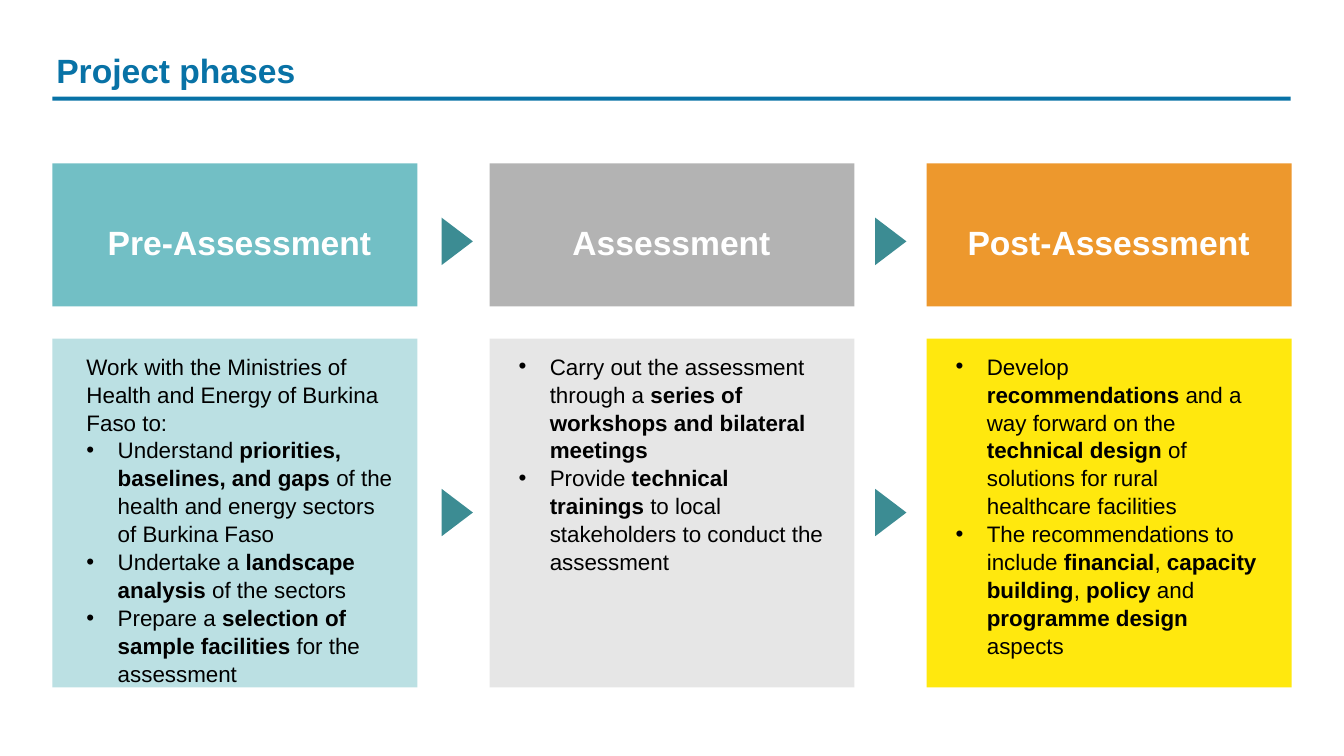
from dataclasses import dataclass
from pptx import Presentation, util as u
from pptx.dml.color import RGBColor
from pptx.enum import shapes, text
from pptx.oxml.ns import qn
from lxml import etree


@dataclass(frozen=True)
class Theme:
    font: str = "Arial"
    head: int = 24
    body: int = 16
    lead: float = 1.045
    cell: float = 0.1
    blue: str = "0872A6"
    arrow: str = "3C8C93"
    white: str = "FFFFFF"
    black: str = "000000"


class Board:
    def __init__(self, slide, theme):
        self.slide = slide
        self.theme = theme

    def span(self, *cells):
        return [u.Inches(n * self.theme.cell) for n in cells]

    def block(self, col, row, wide, high, fill, kind="RECTANGLE", turn=0):
        form = getattr(shapes.MSO_SHAPE, kind)
        shape = self.slide.shapes.add_shape(form, *self.span(col, row, wide, high))
        shape.shadow.inherit = False
        shape.fill.solid()
        shape.fill.fore_color.rgb = RGBColor.from_string(fill)
        shape.line.fill.background()
        shape.rotation = turn

    def arrow(self, col, row):
        self.block(col, row, 4.7, 3.1, self.theme.arrow, "ISOSCELES_TRIANGLE", 90)

    def frame(self, col, row, wide, high):
        box = self.slide.shapes.add_textbox(*self.span(col, row, wide, high))
        box.text_frame.word_wrap = True
        return box.text_frame

    def style(self, run, size, color, bold):
        run.font.name = self.theme.font
        run.font.size = u.Pt(size)
        run.font.color.rgb = RGBColor.from_string(color)
        run.font.bold = bold

    def title(self, col, row, wide, words, color, align):
        para = self.frame(col, row, wide, 5).paragraphs[0]
        para.text = words
        para.alignment = align
        para.line_spacing = self.theme.lead
        self.style(para.runs[0], self.theme.head, color, True)

    def bullet(self, para):
        props = para._p.get_or_add_pPr()
        hang = u.Inches(0.31)
        props.set("marL", str(hang))
        props.set("indent", str(-hang))
        etree.SubElement(props, qn("a:buFont")).set("typeface", self.theme.font)
        etree.SubElement(props, qn("a:buChar")).set("char", "•")

    def points(self, col, row, wide, high, intro, items):
        frame = self.frame(col, row, wide, high)
        lines = ([intro] if intro else []) + items
        for num, line in enumerate(lines):
            para = frame.add_paragraph() if num else frame.paragraphs[0]
            if line != intro:
                self.bullet(para)
            para.line_spacing = self.theme.lead
            for part, words in enumerate(line.split("*")):
                if words:
                    run = para.add_run()
                    run.text = words
                    self.style(run, self.theme.body, self.theme.black, part % 2 == 1)


PHASES = [
    ("Pre-Assessment", "72BFC5", "BBE0E3", 2.4, 33.3,
     "Work with the Ministries of Health and Energy of Burkina Faso to:",
     ["Understand *priorities, baselines, and gaps* of the health and energy sectors of Burkina Faso",
      "Undertake a *landscape analysis* of the sectors",
      "Prepare a *selection of sample facilities* for the assessment"]),
    ("Assessment", "B3B3B3", "E6E6E6", 1.9, 22.6, "",
     ["Carry out the assessment through a *series of workshops and bilateral meetings*",
      "Provide *technical trainings* to local stakeholders to conduct the assessment"]),
    ("Post-Assessment", "ED982D", "FFE80E", 1.9, 30.6, "",
     ["Develop *recommendations* and a way forward on the *technical design* "
      "of solutions for rural healthcare facilities",
      "The recommendations to include *financial*, *capacity building*, *policy* "
      "and *programme design* aspects"]),
]


def main():
    deck = Presentation()
    deck.slide_width, deck.slide_height = u.Inches(13.33), u.Inches(7.5)
    theme = Theme()
    board = Board(deck.slides.add_slide(deck.slide_layouts[6]), theme)
    left, pitch, wide = 5.2, 43.35, 36.2
    board.block(left, 9.6, 122.8, 0.4, theme.blue)
    board.title(4.6, 4.3, 124.1, "Project phases", theme.blue, text.PP_ALIGN.LEFT)
    for num, (name, dark, light, inset, high, intro, items) in enumerate(PHASES):
        col = left + num * pitch
        board.block(col, 16.2, wide, 14.2, dark)
        board.block(col, 33.6, wide, 34.6, light)
        board.title(col + inset, 21.4, 32.3, name, theme.white, text.PP_ALIGN.CENTER)
        board.points(col + inset, 34.4, 32.3, high, intro, items)
    for col in (43, 86):
        for row in (22.4, 49.3):
            board.arrow(col, row)
    deck.save("out.pptx")


if __name__ == "__main__":
    main()
